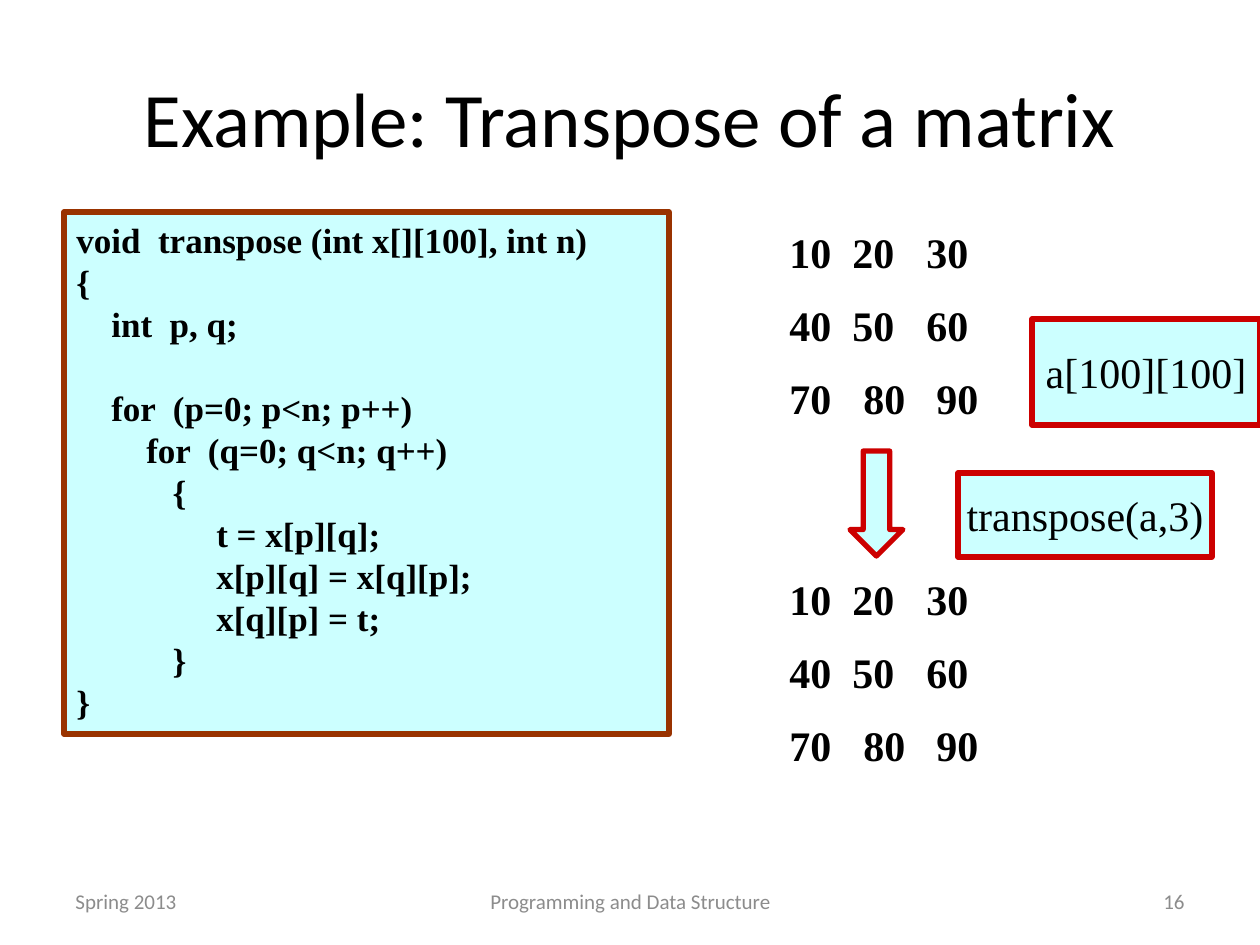
from dataclasses import dataclass

from lxml import etree
from pptx import Presentation
from pptx.dml.color import RGBColor
from pptx.enum.shapes import MSO_SHAPE
from pptx.enum.text import MSO_ANCHOR, PP_ALIGN
from pptx.oxml.ns import qn
from pptx.util import Emu, Pt

RECTANGLE, DOWN_ARROW = MSO_SHAPE.RECTANGLE, MSO_SHAPE.DOWN_ARROW
TOP, MIDDLE = MSO_ANCHOR.TOP, MSO_ANCHOR.MIDDLE
LEFT, CENTER, RIGHT = PP_ALIGN.LEFT, PP_ALIGN.CENTER, PP_ALIGN.RIGHT

EMU_PER_PX = 914400 / 126
SANS, SERIF = "Calibri", "Times New Roman"
BLACK, GREY = "000000", "8C8C8C"
PALE_CYAN, BROWN, RED = "CCFFFF", "993300", "CC0000"

CODE = """void  transpose (int x[][100], int n)
{
    int  p, q;

    for  (p=0; p<n; p++)
        for  (q=0; q<n; q++)
           {
                t = x[p][q];
                x[p][q] = x[q][p];
                x[q][p] = t;
           }
}"""


@dataclass(frozen=True)
class Box:
    left: int
    top: int
    width: int
    height: int


@dataclass(frozen=True)
class Style:
    font: str
    size: int
    color: str = BLACK
    bold: bool = False
    align: PP_ALIGN = LEFT
    anchor: MSO_ANCHOR = MIDDLE
    wrap: bool = True


@dataclass(frozen=True)
class Label:
    text: str
    box: Box
    style: Style


@dataclass(frozen=True)
class Panel:
    box: Box
    outline: str
    text: str = ""
    style: Style | None = None
    preset: MSO_SHAPE = RECTANGLE


@dataclass(frozen=True)
class MatrixRow:
    values: tuple[int, int, int]
    tab_stops: tuple[int, int]


CODE_STYLE = Style(SERIF, 20, bold=True, anchor=TOP)
MATRIX_STYLE = Style(SERIF, 24, bold=True, anchor=TOP)
CALLOUT_STYLE = Style(SERIF, 24, align=CENTER, wrap=False)

LABELS = (
    Label("Example: Transpose of a matrix", Box(63, 38, 1134, 157),
          Style(SANS, 44, align=CENTER)),
    Label("Spring 2013", Box(63, 876, 294, 50), Style(SANS, 12, GREY)),
    Label("Programming and Data Structure", Box(431, 876, 399, 50),
          Style(SANS, 12, GREY, align=CENTER)),
    Label("16", Box(903, 876, 294, 50), Style(SANS, 12, GREY, align=RIGHT)),
)

PANELS = (
    Panel(Box(64, 212, 605, 522), BROWN, CODE, CODE_STYLE),
    Panel(Box(850, 451, 53, 105), RED, preset=DOWN_ARROW),
    Panel(Box(958, 473, 254, 84), RED, "transpose(a,3)", CALLOUT_STYLE),
    Panel(Box(1032, 319, 228, 106), RED, "a[100][100]", CALLOUT_STYLE),
)

MATRIX_ROWS = (
    MatrixRow((10, 20, 30), (63, 137)),
    MatrixRow((40, 50, 60), (63, 137)),
    MatrixRow((70, 80, 90), (74, 147)),
)
MATRIX_TOPS = (220, 567)


def px(length: int) -> Emu:
    return Emu(round(length * EMU_PER_PX))


def rgb(color: str) -> RGBColor:
    return RGBColor.from_string(color)


def place(box: Box) -> tuple[Emu, Emu, Emu, Emu]:
    return px(box.left), px(box.top), px(box.width), px(box.height)


def write(shape, text: str, style: Style) -> None:
    frame = shape.text_frame
    frame.text = text
    frame.word_wrap = style.wrap
    frame.vertical_anchor = style.anchor
    for paragraph in frame.paragraphs:
        paragraph.alignment = style.align
        for font in (paragraph.font, *(run.font for run in paragraph.runs)):
            font.name = style.font
            font.size = Pt(style.size)
            font.bold = style.bold
            font.color.rgb = rgb(style.color)


def draw_label(slide, label: Label):
    text_box = slide.shapes.add_textbox(*place(label.box))
    write(text_box, label.text, label.style)
    return text_box


def draw_panel(slide, panel: Panel) -> None:
    shape = slide.shapes.add_shape(panel.preset, *place(panel.box))
    shape.shadow.inherit = False
    shape.fill.solid()
    shape.fill.fore_color.rgb = rgb(PALE_CYAN)
    shape.line.color.rgb = rgb(panel.outline)
    shape.line.width = Pt(3)
    if panel.style:
        write(shape, panel.text, panel.style)


def set_tab_stops(paragraph, stops: tuple[int, ...]) -> None:
    properties = paragraph._p.get_or_add_pPr()
    tab_list = etree.Element(qn("a:tabLst"))
    for stop in stops:
        etree.SubElement(tab_list, qn("a:tab"), pos=str(px(stop)), algn="l")
    default_run = properties.find(qn("a:defRPr"))
    default_run.addprevious(tab_list)


def draw_matrix(slide, top: int) -> None:
    text = "\n".join("\t".join(map(str, row.values)) for row in MATRIX_ROWS)
    matrix = draw_label(slide, Label(text, Box(777, top, 420, 214), MATRIX_STYLE))
    for index, (paragraph, row) in enumerate(
            zip(matrix.text_frame.paragraphs, MATRIX_ROWS)):
        if index:
            paragraph.space_before = Pt(13)
        set_tab_stops(paragraph, row.tab_stops)


def main() -> None:
    presentation = Presentation()
    presentation.slide_width, presentation.slide_height = px(1260), px(945)
    slide = presentation.slides.add_slide(presentation.slide_layouts[6])
    for label in LABELS:
        draw_label(slide, label)
    for panel in PANELS:
        draw_panel(slide, panel)
    for top in MATRIX_TOPS:
        draw_matrix(slide, top)
    presentation.save("out.pptx")


if __name__ == "__main__":
    main()
